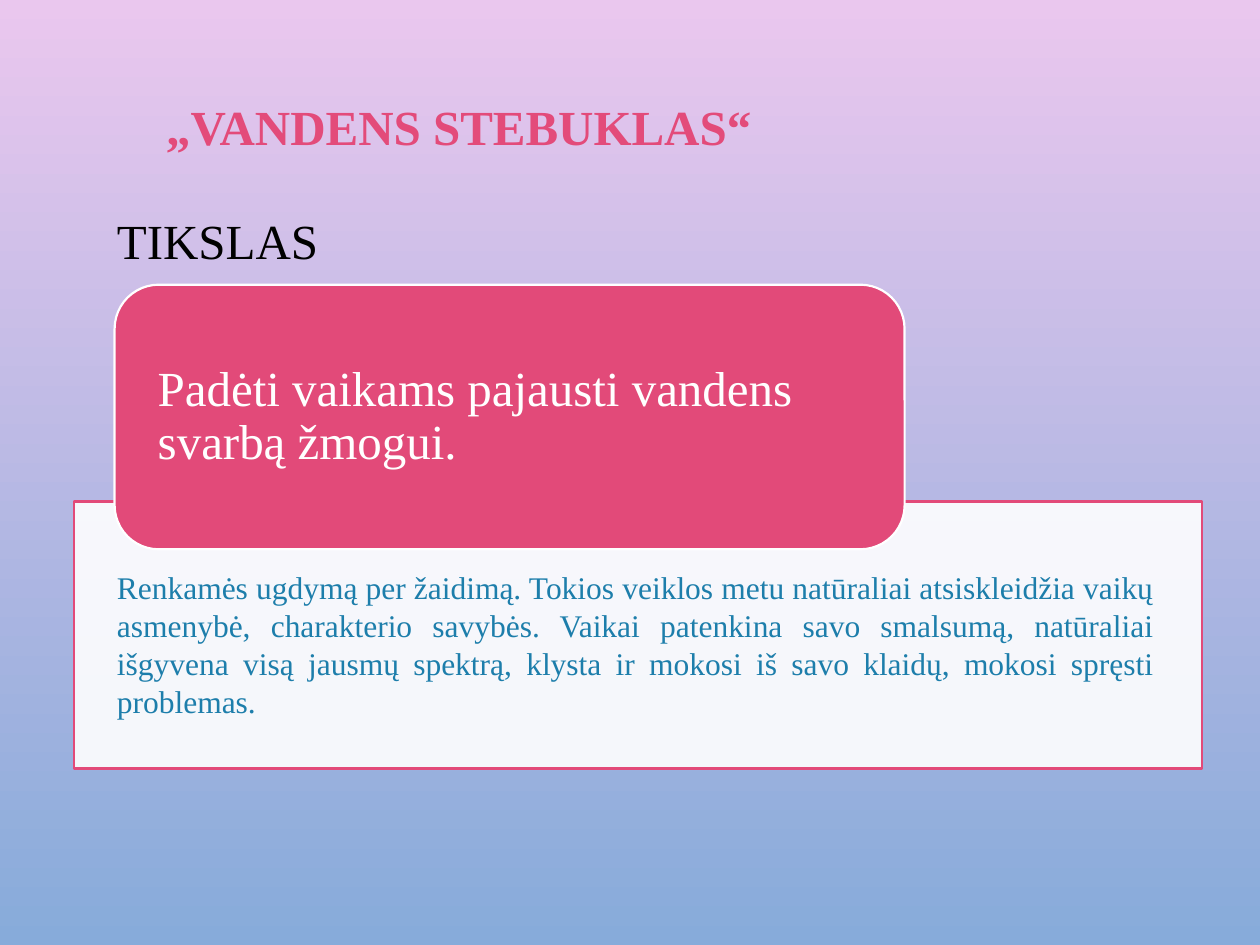
from dataclasses import dataclass
from lxml.etree import SubElement
from pptx import Presentation
from pptx.dml.color import RGBColor
from pptx.enum.shapes import MSO_SHAPE
from pptx.enum.text import MSO_ANCHOR, MSO_AUTO_SIZE, PP_ALIGN
from pptx.oxml.ns import qn
from pptx.util import Inches, Pt

HUES = {
    "sky": "EAC7EE", "sea": "87ABDA", "rose": "E34B7A", "card": "E24A79",
    "white": "FFFFFF", "black": "000000", "blue": "1D7EAB",
}
FONT = "Times New Roman"


@dataclass
class Text:
    words: str
    hue: str
    size: int = 28
    bold: bool = False
    align: PP_ALIGN = PP_ALIGN.LEFT
    anchor: MSO_ANCHOR = MSO_ANCHOR.TOP
    space: float = 1.0
    side: float = 0.1
    edge: float = 0.05
    grow: bool = False


@dataclass
class Panel:
    kind: MSO_SHAPE
    box: tuple
    fill: str
    line: str


def rgb(hue: str) -> RGBColor:
    return RGBColor.from_string(HUES[hue])


def write(shape, text: Text) -> None:
    frame = shape.text_frame
    frame.word_wrap = True
    frame.vertical_anchor = text.anchor
    frame.margin_left = frame.margin_right = Inches(text.side)
    frame.margin_top = frame.margin_bottom = Inches(text.edge)
    if text.grow:
        frame.auto_size = MSO_AUTO_SIZE.SHAPE_TO_FIT_TEXT
    para = frame.paragraphs[0]
    para.text = text.words
    para.alignment = text.align
    if text.space != 1:
        para.line_spacing = text.space
    font = para.font
    font.name, font.size, font.bold = FONT, Pt(text.size), text.bold
    font.color.rgb = rgb(text.hue)


def label(slide, box: tuple, text: Text) -> None:
    write(slide.shapes.add_textbox(*map(Inches, box)), text)


def panel(slide, item: Panel):
    shape = slide.shapes.add_shape(item.kind, *map(Inches, item.box))
    shape.shadow.inherit = False
    shape.fill.solid()
    shape.fill.fore_color.rgb = rgb(item.fill)
    shape.line.color.rgb = rgb(item.line)
    shape.line.width = Pt(1.25)
    return shape


def fade(shape, share: int) -> None:
    """Set the fill's opacity in percent."""
    tint = shape.fill._xPr.find(qn("a:solidFill"))[0]
    SubElement(tint, qn("a:alpha")).set("val", str(share * 1000))


def main() -> None:
    deck = Presentation()
    deck.slide_width, deck.slide_height = Inches(10), Inches(7.5)
    slide = deck.slides.add_slide(deck.slide_layouts[6])

    # Background, top to bottom
    back = slide.background.fill
    back.gradient()
    back.gradient_angle = 270
    for stop, hue, place in zip(back.gradient_stops, ("sky", "sea"), (0, 1)):
        stop.color.rgb = rgb(hue)
        stop.position = place

    # Title and heading
    label(slide, (1.22, 0.15, 8.5, 1.75),
          Text("„VANDENS STEBUKLAS“", "rose", bold=True,
               anchor=MSO_ANCHOR.MIDDLE, space=0.9))
    label(slide, (0.83, 1.62, 1.95, 0.88),
          Text("TIKSLAS", "black", align=PP_ALIGN.JUSTIFY, grow=True))

    # Pale panel with the goal card over its top edge
    pale = panel(slide, Panel(MSO_SHAPE.RECTANGLE, (0.59, 3.98, 8.95, 2.12),
                              "white", "card"))
    fade(pale, 90)
    goal = panel(slide, Panel(MSO_SHAPE.ROUNDED_RECTANGLE,
                              (0.91, 2.26, 6.27, 2.1), "card", "white"))
    write(goal, Text("Padėti vaikams pajausti vandens svarbą žmogui.", "white",
                     anchor=MSO_ANCHOR.MIDDLE, space=0.9, side=0.24, edge=0))

    # Explanation
    label(slide, (0.83, 4.46, 8.43, 1.31),
          Text("Renkamės ugdymą per žaidimą. Tokios veiklos metu natūraliai "
               "atsiskleidžia vaikų asmenybė, charakterio savybės. Vaikai "
               "patenkina savo smalsumą, natūraliai išgyvena visą jausmų "
               "spektrą, klysta ir mokosi iš savo klaidų, mokosi spręsti "
               "problemas.", "blue", size=18, align=PP_ALIGN.JUSTIFY,
               grow=True))

    deck.save("out.pptx")


if __name__ == "__main__":
    main()
